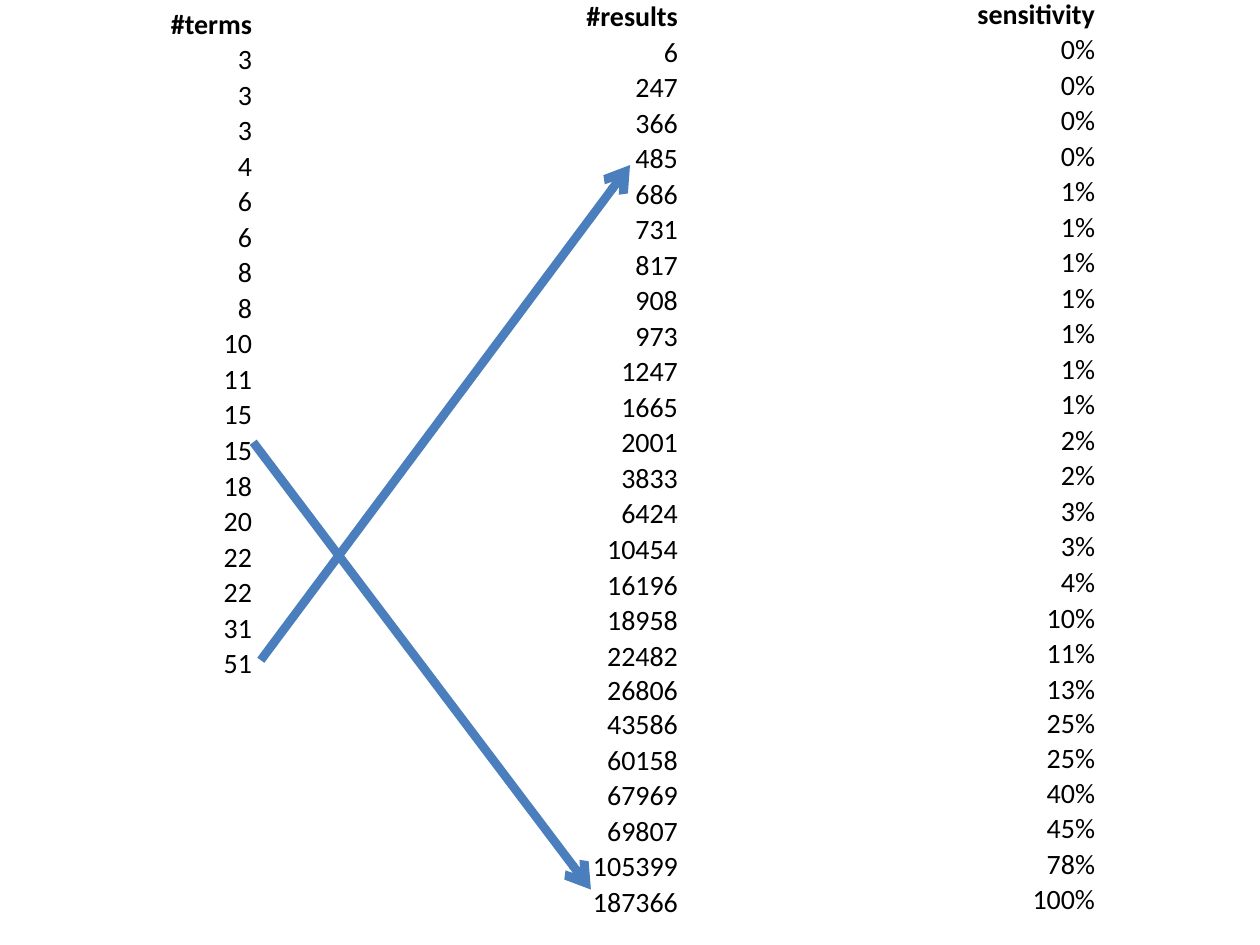
import pptx
import pptx.dml.color
import pptx.enum.shapes
import pptx.enum.text
import pptx.oxml.ns
import pptx.util
from lxml import etree
from pptx.util import Inches

BLACK = pptx.dml.color.RGBColor(0x00, 0x00, 0x00)
WHITE = pptx.dml.color.RGBColor(0xFF, 0xFF, 0xFF)
BLUE = pptx.dml.color.RGBColor(0x4B, 0x7E, 0xBC)
FONT = "Calibri"
ROW_HEIGHT = 0.21

# A line break inside an entry puts several values in one cell
TERMS = ["#terms"] + "3 3 3 4 6 6 8 8 10 11 15 15 18 20 22 22 31 51".split()
RESULTS = (
    ["#results"]
    + "6 247 366 485 686 731 817 908 973 1247 1665 2001 3833 6424 10454 16196 18958".split()
    + ["22482\n26806\n43586", "60158", "67969", "69807", "105399", "187366"]
)
SENSITIVITY = (
    ["sensitivity"]
    + ["0%"] * 4 + ["1%"] * 7 + ["2%"] * 2 + ["3%"] * 2
    + ["4%", "10%", "11%", "13%\n25%", "25%\n40%", "45%", "78%", "100%"]
)


def add_text(tf, text, size=16, bold=False, color=BLACK,
             align=pptx.enum.text.PP_ALIGN.RIGHT):
    for i, line in enumerate(text.split("\n")):
        p = tf.add_paragraph() if i else tf.paragraphs[0]
        p.alignment = align
        r = p.add_run()
        r.text = line
        r.font.name = FONT
        r.font.size = pptx.util.Pt(size)
        r.font.bold = bold
        r.font.color.rgb = color


def set_borders(cell, color, width):
    tc_pr = cell._tc.get_or_add_tcPr()
    qn = pptx.oxml.ns.qn
    for i, side in enumerate(("lnL", "lnR", "lnT", "lnB")):
        ln = etree.Element(qn(f"a:{side}"), w=str(pptx.util.Pt(width)))
        fill = etree.SubElement(ln, qn("a:solidFill"))
        etree.SubElement(fill, qn("a:srgbClr"), val=str(color))
        tc_pr.insert(i, ln)


def add_column(slide, left, top, width, entries):
    """One-column table: bold heading, then right-aligned values."""
    table = slide.shapes.add_table(
        len(entries), 1, Inches(left), Inches(top), Inches(width),
        Inches(ROW_HEIGHT * len(entries))).table
    table.first_row = False
    table.horz_banding = False
    for i, entry in enumerate(entries):
        table.rows[i].height = Inches(ROW_HEIGHT)
        cell = table.cell(i, 0)
        cell.fill.background()
        cell.vertical_anchor = pptx.enum.text.MSO_ANCHOR.BOTTOM
        cell.margin_left = cell.margin_right = cell.margin_top = Inches(0.01)
        cell.margin_bottom = 0
        add_text(cell.text_frame, entry, bold=i == 0)
        set_borders(cell, WHITE, 1)


def add_arrow(slide, x1, y1, x2, y2):
    line = slide.shapes.add_connector(
        pptx.enum.shapes.MSO_CONNECTOR.STRAIGHT,
        Inches(x1), Inches(y1), Inches(x2), Inches(y2))
    line.line.color.rgb = BLUE
    line.line.width = pptx.util.Pt(5)
    qn = pptx.oxml.ns.qn
    etree.SubElement(line.line._get_or_add_ln(), qn("a:tailEnd"), type="arrow")
    etree.SubElement(line._element.spPr, qn("a:effectLst"))


def main():
    prs = pptx.Presentation()
    prs.slide_width, prs.slide_height = Inches(10), Inches(7.5)
    slide = prs.slides.add_slide(prs.slide_layouts[6])

    # Three columns of figures
    add_column(slide, 0.5, 0.05, 1.51, TERMS)
    add_column(slide, 4.21, -0.01, 1.18, RESULTS)
    add_column(slide, 7.52, -0.03, 1.18, SENSITIVITY)

    # Arrows from terms to results
    add_arrow(slide, 2.01, 3.51, 4.69, 7.06)
    add_arrow(slide, 2.07, 5.24, 5, 1.31)

    prs.save("out.pptx")


if __name__ == "__main__":
    main()
